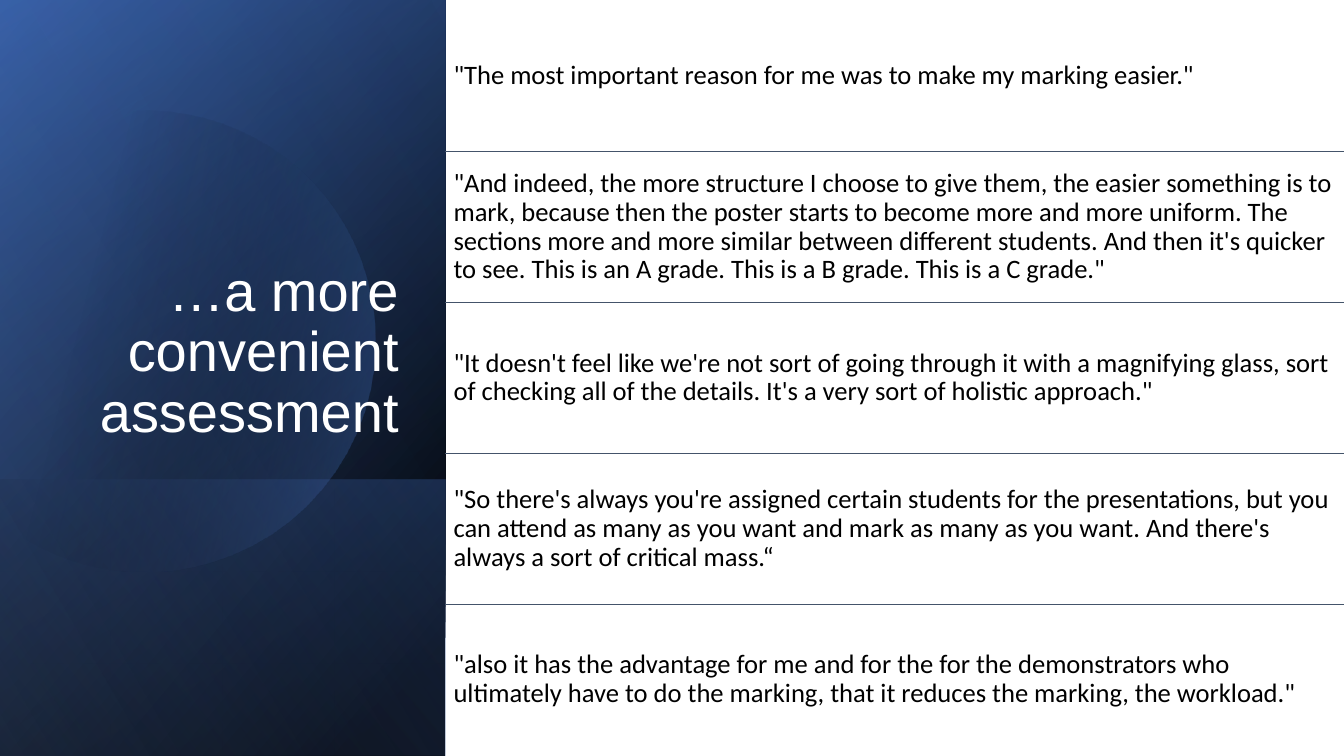
from dataclasses import dataclass

from lxml.etree import SubElement
from pptx import Presentation
from pptx.dml.color import RGBColor
from pptx.enum.shapes import MSO_CONNECTOR, MSO_SHAPE
from pptx.enum.text import MSO_ANCHOR, PP_ALIGN
from pptx.oxml import parse_xml
from pptx.oxml.ns import nsdecls, qn
from pptx.util import Inches, Pt


@dataclass(frozen=True)
class Theme:
    black: str = "000000"
    white: str = "FFFFFF"
    deep_blue: str = "2F5597"
    blue: str = "4472C4"
    pale_blue: str = "8FAADC"
    rule: str = "44546A"
    title_font: str = "Arial"
    quote_font: str = "Calibri"
    title_size: int = 40
    quote_size: int = 19
    rule_width: float = 0.5
    line_spacing: float = 0.9


THEME = Theme()
PANEL_WIDTH = 33.15
FIRST_ROW = 0.13
ROW_HEIGHT = 19.95
CURVE_STEPS = 16

PANEL_LAYERS = [
    (0, 100, 50, [(8, THEME.black, 100), (100, THEME.deep_blue, 100)]),
    (0, 100, 30, [(0, THEME.black, 0), (99, THEME.blue, 46)]),
    (63.47, 36.53, 130, [(2, THEME.blue, 29), (100, THEME.black, 30)]),
]
DISC_GLOW = [(29, THEME.black, 0), (100, THEME.blue, 43)]
PANEL_SHEEN = (0, 100, 120, [(0, THEME.black, 0), (99, THEME.pale_blue, 11)])

DISC_START = (11.18, 14.67)
DISC_RIGHT = [
    [(18.45, 14.93), (25.13, 23.6), (27.23, 36.67)],
    [(29.85, 52.93), (24.6, 69.73), (15.53, 74.4)],
    [(9.83, 77.33), (3.98, 74.8), (-0.23, 68.53)],
]
DISC_EDGE = [(-1.13, 67.07), (-1.13, 23.33), (0, 21.47)]
DISC_TOP = [
    [(1.73, 18.93), (3.75, 17.07), (6, 15.87)],
    [(7.73, 15.07), (9.45, 14.67), DISC_START],
]

TITLE = "…a more convenient assessment"
QUOTES = [
    '"The most important reason for me was to make my marking easier."',
    '"And indeed, the more structure I choose to give them, the easier something '
    "is to mark, because then the poster starts to become more and more uniform. "
    "The sections more and more similar between different students. And then it's "
    'quicker to see. This is an A grade. This is a B grade. This is a C grade."',
    '"It doesn\'t feel like we\'re not sort of going through it with a magnifying '
    "glass, sort of checking all of the details. It's a very sort of holistic "
    'approach."',
    '"So there\'s always you\'re assigned certain students for the presentations, '
    "but you can attend as many as you want and mark as many as you want. And "
    "there's always a sort of critical mass.“",
    '"also it has the advantage for me and for the for the demonstrators who '
    "ultimately have to do the marking, that it reduces the marking, the "
    'workload."',
]


def apply_format(target, values):
    for name, value in values.items():
        setattr(target, name, value)


def trace_curves(start, curves):
    points = []
    for first, second, end in curves:
        for step in range(1, CURVE_STEPS + 1):
            t = step / CURVE_STEPS
            weights = ((1 - t) ** 3, 3 * t * (1 - t) ** 2, 3 * t * t * (1 - t), t**3)
            corners = (start, first, second, end)
            points.append(
                tuple(sum(w * c[axis] for w, c in zip(weights, corners)) for axis in (0, 1))
            )
        start = end
    return points


class SlideBuilder:
    def __init__(self, deck, theme):
        self.deck = deck
        self.theme = theme
        self.slide = deck.slides.add_slide(deck.slide_layouts[6])

    def across(self, share):
        return round(self.deck.slide_width * share / 100)

    def down(self, share):
        return round(self.deck.slide_height * share / 100)

    def gradient(self, shape, stops, angle):
        shape.shadow.inherit = False
        shape.line.fill.background()
        shape.fill.background()
        stop_xml = "".join(
            f'<a:gs pos="{place * 1000}"><a:srgbClr val="{color}">'
            f'<a:alpha val="{opacity * 1000}"/></a:srgbClr></a:gs>'
            for place, color, opacity in stops
        )
        blend = parse_xml(
            f'<a:gradFill {nsdecls("a")} rotWithShape="1"><a:gsLst>{stop_xml}</a:gsLst>'
            f'<a:lin ang="{angle * 60000}" scaled="0"/></a:gradFill>'
        )
        properties = shape._element.spPr
        properties.replace(properties.find(qn("a:noFill")), blend)

    def panel_layer(self, top, height, angle, stops):
        length, breadth = self.down(height), self.across(PANEL_WIDTH)
        left = (breadth - length) // 2
        upper = self.down(top) + (length - breadth) // 2
        layer = self.slide.shapes.add_shape(MSO_SHAPE.RECTANGLE, left, upper, length, breadth)
        layer.rotation = 90
        layer._element.spPr.find(qn("a:xfrm")).set("flipH", "1")
        self.gradient(layer, stops, angle)

    def outline(self, start, points, stops, angle):
        scaled = [(self.across(x), self.down(y)) for x, y in [start, *points]]
        pen = self.slide.shapes.build_freeform(*scaled[0])
        pen.add_line_segments(scaled[1:], close=True)
        self.gradient(pen.convert_to_shape(), stops, angle)

    def text(self, wording, box, frame_format, paragraph_format, font_format, color):
        left, top, width, height = box
        holder = self.slide.shapes.add_textbox(
            self.across(left), self.down(top), self.across(width), self.down(height)
        )
        frame = holder.text_frame
        apply_format(frame, {"word_wrap": True, **frame_format})
        paragraph = frame.paragraphs[0]
        apply_format(paragraph, {"line_spacing": self.theme.line_spacing, **paragraph_format})
        run = paragraph.add_run()
        run.text = wording
        apply_format(run.font, font_format)
        run.font.color.rgb = RGBColor.from_string(color)

    def rule(self, left, right, height):
        divider = self.slide.shapes.add_connector(
            MSO_CONNECTOR.STRAIGHT,
            self.across(left), self.down(height), self.across(right), self.down(height),
        )
        divider.line.width = Pt(self.theme.rule_width)
        divider.line.color.rgb = RGBColor.from_string(self.theme.rule)
        SubElement(divider._element.spPr, qn("a:effectLst"))


def main():
    deck = Presentation()
    apply_format(deck, {"slide_width": Inches(13.33), "slide_height": Inches(7.5)})
    builder = SlideBuilder(deck, THEME)

    for layer in PANEL_LAYERS:
        builder.panel_layer(*layer)
    disc = [
        *trace_curves(DISC_START, DISC_RIGHT),
        *DISC_EDGE,
        *trace_curves(DISC_EDGE[-1], DISC_TOP),
    ]
    builder.outline(DISC_START, disc, DISC_GLOW, 14)
    builder.panel_layer(*PANEL_SHEEN)

    builder.text(
        TITLE,
        (4.8, 24.53, 25.58, 34.93),
        {"vertical_anchor": MSO_ANCHOR.BOTTOM},
        {"alignment": PP_ALIGN.RIGHT},
        {"name": THEME.title_font, "size": Pt(THEME.title_size)},
        THEME.white,
    )

    margins = {f"margin_{side}": Inches(0.08) for side in ("left", "top", "right", "bottom")}
    for row, quote in enumerate(QUOTES):
        top = FIRST_ROW + row * ROW_HEIGHT
        if row:
            builder.rule(PANEL_WIDTH, 100, top)
        builder.text(
            quote,
            (PANEL_WIDTH, top, 100 - PANEL_WIDTH, ROW_HEIGHT),
            {"vertical_anchor": MSO_ANCHOR.MIDDLE, **margins},
            {"alignment": PP_ALIGN.LEFT},
            {"name": THEME.quote_font, "size": Pt(THEME.quote_size)},
            THEME.black,
        )

    deck.save("out.pptx")


if __name__ == "__main__":
    main()
